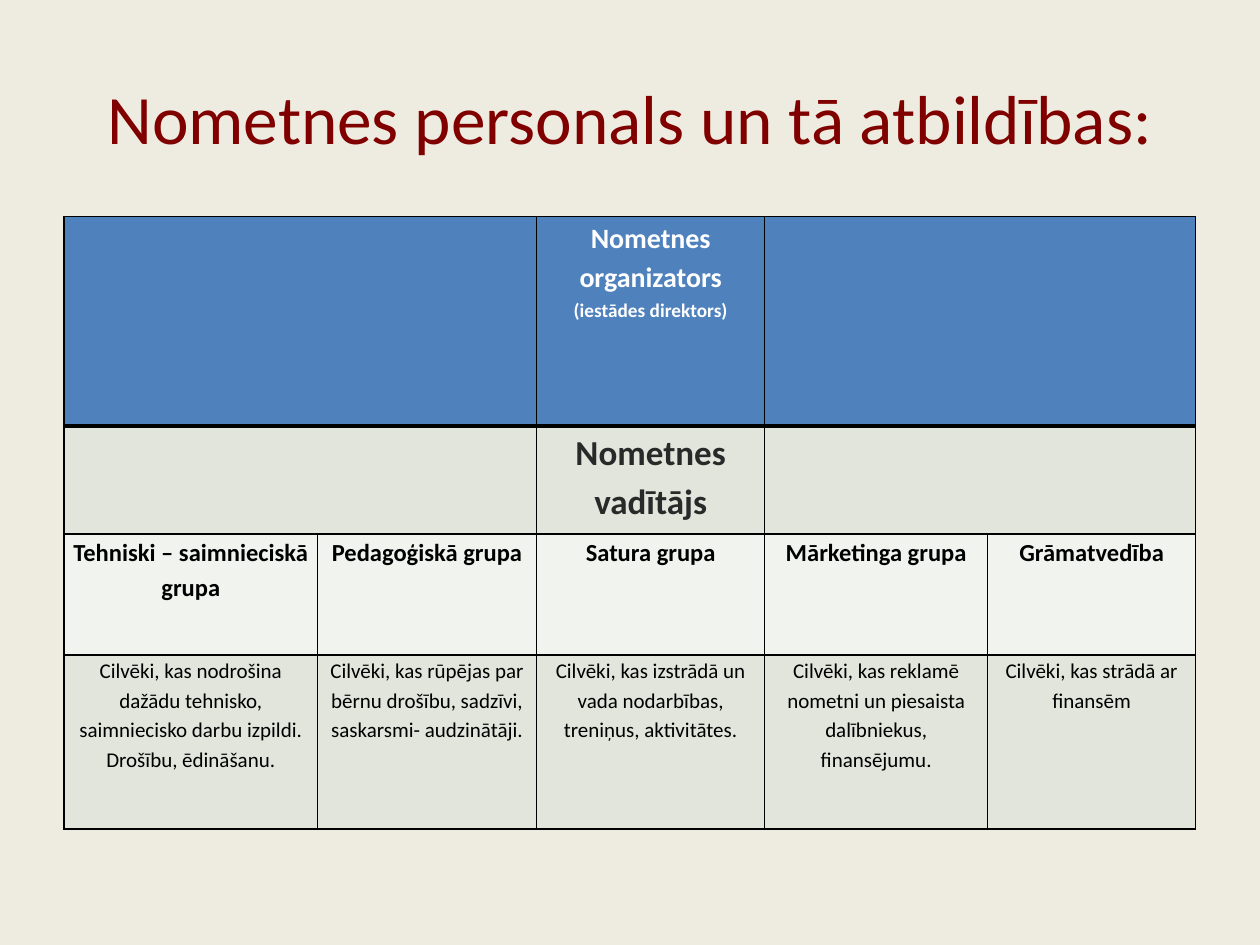
from dataclasses import dataclass

from lxml.etree import SubElement
from pptx import Presentation
from pptx.dml.color import RGBColor
from pptx.enum.text import MSO_ANCHOR, PP_ALIGN
from pptx.oxml.ns import qn
from pptx.util import Inches, Pt


@dataclass(frozen=True)
class Theme:
    font: str = "Calibri"
    background: str = "EEECE1"
    title: str = "800000"
    header: str = "4F81BD"
    band: str = "E1E5DC"
    light: str = "F0F3EE"
    white: str = "FFFFFF"
    dark: str = "292929"
    black: str = "000000"
    title_size: float = 39.6
    organizer_size: int = 16
    note_size: int = 11
    leader_size: int = 20
    group_size: int = 14
    duty_size: int = 12
    thin: int = 1
    thick: int = 3


def write_text(para, text, *, font, size, color, bold=False, spacing=1.0):
    """Put one formatted, centred span in a paragraph."""
    para.alignment = PP_ALIGN.CENTER
    para.line_spacing = spacing
    span = para.add_run()
    span.text = text
    span.font.name = font
    span.font.size = Pt(size)
    span.font.bold = bold
    span.font.color.rgb = RGBColor.from_string(color)


class SlideBuilder:
    def __init__(self, slide, theme):
        self.slide = slide
        self.theme = theme
        background = slide.background.fill
        background.solid()
        background.fore_color.rgb = RGBColor.from_string(theme.background)

    def title(self, text, left, top, width, height):
        box = self.slide.shapes.add_textbox(
            Inches(left), Inches(top), Inches(width), Inches(height))
        frame = box.text_frame
        frame.word_wrap = True
        frame.vertical_anchor = MSO_ANCHOR.MIDDLE
        write_text(frame.paragraphs[0], text, font=self.theme.font,
                   size=self.theme.title_size, color=self.theme.title)

    def table(self, left, top, widths, heights):
        frame = self.slide.shapes.add_table(
            len(heights), len(widths), Inches(left), Inches(top),
            Inches(sum(widths)), Inches(sum(heights)))
        table = frame.table
        table.first_row = table.horz_banding = False
        for column, width in zip(table.columns, widths):
            column.width = Inches(width)
        for row, height in zip(table.rows, heights):
            row.height = Inches(height)
        return table

    def cell_style(self, cell, fill, top, bottom):
        thin = self.theme.thin
        properties = cell._tc.get_or_add_tcPr()
        for tag, width in (("lnL", thin), ("lnR", thin),
                           ("lnT", top), ("lnB", bottom)):
            line = SubElement(properties, qn(f"a:{tag}"), w=str(Pt(width)))
            solid = SubElement(line, qn("a:solidFill"))
            SubElement(solid, qn("a:srgbClr"), val=self.theme.black)
        cell.fill.solid()
        cell.fill.fore_color.rgb = RGBColor.from_string(fill)
        cell.margin_left = cell.margin_right = Inches(0.07)
        cell.margin_top = cell.margin_bottom = 0

    def cell_text(self, cell, lines):
        frame = cell.text_frame
        for index, (text, size, color, bold) in enumerate(lines):
            para = frame.add_paragraph() if index else frame.paragraphs[0]
            write_text(para, text, font=self.theme.font, size=size,
                       color=color, bold=bold, spacing=1.15)


def main():
    theme = Theme()
    deck = Presentation()
    deck.slide_width, deck.slide_height = Inches(10), Inches(7.5)
    page = SlideBuilder(deck.slides.add_slide(deck.slide_layouts[6]), theme)

    # Title
    page.title("Nometnes personals un tā atbildības:", 0.5, 0.3, 9, 1.25)

    # Table grid: a thick rule divides the organizer row from the rest
    table = page.table(0.51, 1.72, [2.01, 1.74, 1.81, 1.77, 1.65],
                       [1.66, 0.86, 0.96, 1.38])
    fills = [theme.header, theme.band, theme.light, theme.band]
    for row, fill in enumerate(fills):
        top = theme.thick if row == 1 else theme.thin
        bottom = theme.thick if row == 0 else theme.thin
        for cell in table.rows[row].cells:
            page.cell_style(cell, fill, top, bottom)

    # Management rows, with the outer columns merged in pairs
    management = [
        [("Nometnes organizators", theme.organizer_size, theme.white, True),
         ("(iestādes direktors)", theme.note_size, theme.white, True)],
        [("Nometnes vadītājs", theme.leader_size, theme.dark, True)],
    ]
    for row, lines in enumerate(management):
        for first in (0, 3):
            table.cell(row, first).merge(table.cell(row, first + 1))
        page.cell_text(table.cell(row, 2), lines)

    # Groups and their duties
    groups = [
        ("Tehniski – saimnieciskā grupa",
         ["Cilvēki, kas nodrošina dažādu tehnisko,",
          "saimniecisko darbu izpildi. Drošību, ēdināšanu."]),
        ("Pedagoģiskā grupa",
         ["Cilvēki, kas rūpējas par bērnu drošību, sadzīvi,",
          "saskarsmi- audzinātāji."]),
        ("Satura grupa",
         ["Cilvēki, kas izstrādā un vada nodarbības, treniņus, aktivitātes."]),
        ("Mārketinga grupa",
         ["Cilvēki, kas reklamē nometni un piesaista dalībniekus, finansējumu."]),
        ("Grāmatvedība", ["Cilvēki, kas strādā ar finansēm"]),
    ]
    for column, (group, duties) in enumerate(groups):
        page.cell_text(table.cell(2, column),
                       [(group, theme.group_size, theme.black, True)])
        page.cell_text(table.cell(3, column),
                       [(duty, theme.duty_size, theme.black, False)
                        for duty in duties])

    deck.save("out.pptx")


if __name__ == "__main__":
    main()
